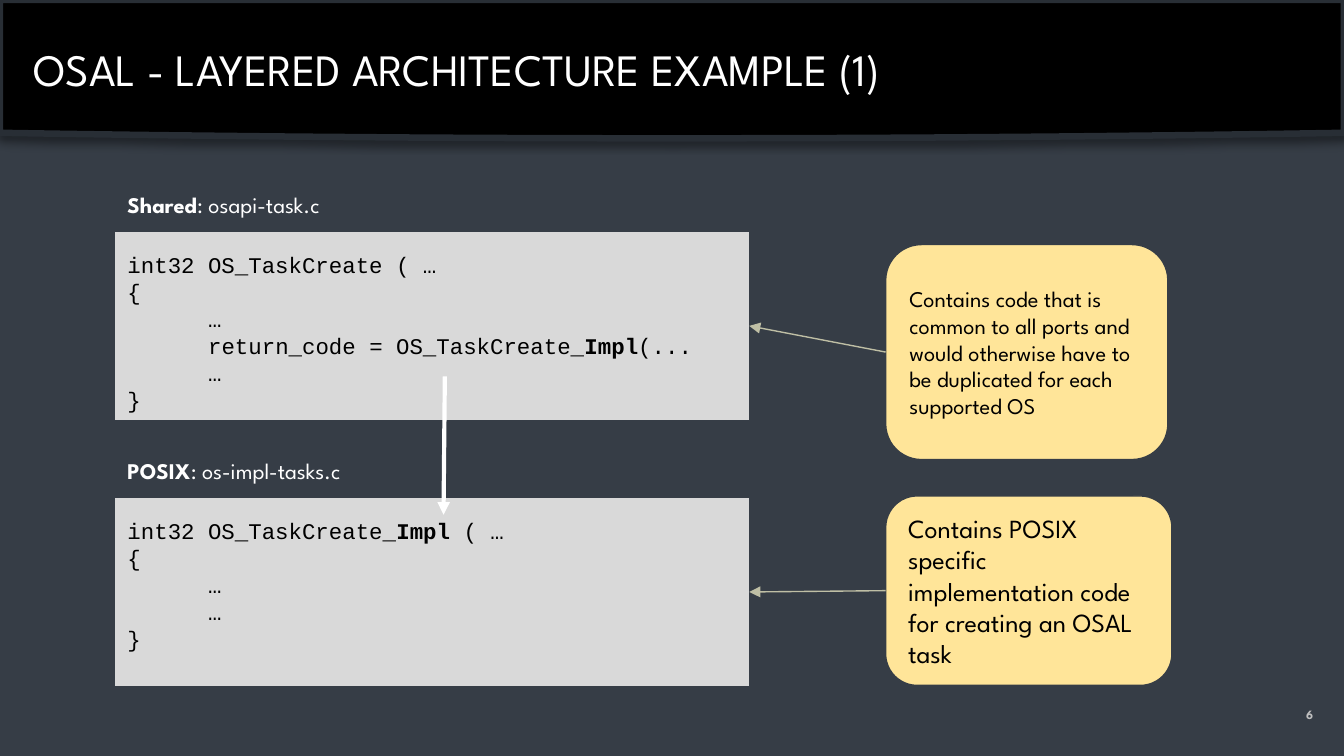
from dataclasses import dataclass

from lxml.etree import SubElement
from pptx import Presentation
from pptx.dml.color import RGBColor
from pptx.enum.shapes import MSO_CONNECTOR, MSO_SHAPE
from pptx.enum.text import MSO_ANCHOR, MSO_AUTO_SIZE, PP_ALIGN
from pptx.oxml.ns import qn
from pptx.util import Inches, Pt

COLUMNS, ROWS = 100, 56.25


@dataclass(frozen=True)
class Theme:
    background: str = "363D46"
    header: str = "000000"
    header_edge: str = "282E35"
    light: str = "FFFFFF"
    dark: str = "000000"
    muted: str = "BFBFBF"
    panel: str = "D9D9D9"
    note: str = "FFE599"
    link: str = "BFBFA5"
    sans: str = "League Spartan"
    mono: str = "Courier New"
    title_size: float = 24
    large_size: float = 14
    body_size: float = 12
    number_size: float = 6.8


@dataclass(frozen=True)
class Box:
    left: float
    top: float
    width: float
    height: float

    def place(self):
        return [grid(value) for value in (self.left, self.top, self.width, self.height)]


THEME = Theme()


def grid(units):
    return Inches(units / 10)


def color(value):
    return RGBColor.from_string(value)


def write_text(shape, paragraphs, size=THEME.body_size, font=THEME.sans, fill=THEME.light,
               align=PP_ALIGN.LEFT, anchor=MSO_ANCHOR.TOP, spacing=None):
    frame = shape.text_frame
    frame.auto_size = MSO_AUTO_SIZE.NONE
    frame.word_wrap = True
    frame.vertical_anchor = anchor
    frame.margin_left = frame.margin_right = frame.margin_top = frame.margin_bottom = grid(1)
    for index, (indent, runs) in enumerate(paragraphs):
        paragraph = frame.paragraphs[0] if index == 0 else frame.add_paragraph()
        paragraph.alignment = align
        if spacing:
            paragraph.line_spacing = Pt(spacing)
        if indent:
            properties = paragraph._p.get_or_add_pPr()
            properties.set("marL", str(grid(indent)))
            properties.set("indent", "0")
        for text, bold in runs:
            run = paragraph.add_run()
            run.text = text
            run.font.name = font
            run.font.size = Pt(size)
            run.font.bold = bold
            run.font.color.rgb = color(fill)


def add_text(slide, box, paragraphs, **text_format):
    shape = slide.shapes.add_textbox(*box.place())
    write_text(shape, paragraphs, **text_format)


def paint(shape, fill, edge, width):
    shape.shadow.inherit = False
    shape.fill.solid()
    shape.fill.fore_color.rgb = color(fill)
    shape.line.color.rgb = color(edge)
    shape.line.width = Pt(width)


def add_block(slide, kind, box, fill):
    shape = slide.shapes.add_shape(kind, *box.place())
    paint(shape, fill, THEME.background, 0.75)
    return shape


def add_arrow(slide, start, end, fill, width):
    points = [grid(value) for value in (*start, *end)]
    arrow = slide.shapes.add_connector(MSO_CONNECTOR.STRAIGHT, *points)
    arrow.line.color.rgb = color(fill)
    arrow.line.width = Pt(width)
    SubElement(arrow.line._get_or_add_ln(), qn("a:tailEnd"), type="triangle")
    SubElement(arrow._element.spPr, qn("a:effectLst"))
    return arrow


def add_header(slide, box, text):
    edge = box.height * 0.96
    sag = box.height - edge
    steps = 40
    curve = []
    for step in range(steps + 1):
        share = 1 - step / steps
        curve.append((grid(box.width * share), grid(edge + sag * (1 - (2 * share - 1) ** 2))))
    builder = slide.shapes.build_freeform(0, 0, scale=1.0)
    builder.add_line_segments([(grid(box.width), 0), *curve], close=True)
    band = builder.convert_to_shape()
    paint(band, THEME.header, THEME.header_edge, 3.5)
    effects = band._element.spPr.find(qn("a:effectLst"))
    shadow = SubElement(effects, qn("a:outerShdw"), blurRad=str(Pt(4)), dist=str(Pt(3)),
                        dir="5400000", algn="t", rotWithShape="0")
    shade = SubElement(shadow, qn("a:srgbClr"), val=THEME.header)
    SubElement(shade, qn("a:alpha"), val="40000")

    title = slide.shapes.title
    title.element.addprevious(band.element)
    title.left, title.top, title.width, title.height = Box(1.5, 2.1, 96.3, 6.3).place()
    write_text(title, [(0, [(text, False)])], size=THEME.title_size)


def add_code_panel(slide, box, layer, file_name, code):
    label_height = 4
    panel_box = Box(box.left, box.top + label_height, box.width, box.height - label_height)
    panel = add_block(slide, MSO_SHAPE.RECTANGLE, panel_box, THEME.panel)
    add_text(slide, Box(box.left, box.top, 19.5, label_height),
             [(0, [(layer, True), (f": {file_name}", False)])])
    add_text(slide, Box(box.left, panel_box.top + 0.5, 44.8, 2 + 2 * len(code)), code,
             font=THEME.mono, fill=THEME.dark, spacing=14.4)
    return panel


def add_note(slide, box, text, size, target):
    note = add_block(slide, MSO_SHAPE.ROUNDED_RECTANGLE, box, THEME.note)
    write_text(note, [(0, [(text, False)])], size=size, fill=THEME.dark,
               anchor=MSO_ANCHOR.MIDDLE)
    link = add_arrow(slide, (0, 0), (1, 1), THEME.link, 0.75)
    link.begin_connect(note, 1)
    link.end_connect(target, 3)


def main():
    presentation = Presentation()
    presentation.slide_width, presentation.slide_height = grid(COLUMNS), grid(ROWS)
    slide = presentation.slides.add_slide(presentation.slide_layouts[5])
    slide.background.fill.solid()
    slide.background.fill.fore_color.rgb = color(THEME.background)

    add_header(slide, Box(0, 0, COLUMNS, 10.3), "OSAL - LAYERED ARCHITECTURE EXAMPLE (1)")
    add_text(slide, Box(92.7, 51, 6, 4.3), [(0, [("6", True)])], size=THEME.number_size,
             fill=THEME.muted, align=PP_ALIGN.RIGHT, anchor=MSO_ANCHOR.MIDDLE)

    opening, ellipsis, closing = [(level, [(text, False)])
                                  for level, text in ((0, "{"), (6, "…"), (0, "}"))]
    posix_code = [(0, [("int32 OS_TaskCreate_", False), ("Impl", True), (" ( …", False)]),
                  opening, ellipsis, ellipsis, closing]
    call = (6, [("return_code = OS_TaskCreate_", False), ("Impl", True), ("(...", False)])
    shared_code = [(0, [("int32 OS_TaskCreate ( …", False)]),
                   opening, ellipsis, call, ellipsis, closing]

    posix = add_code_panel(slide, Box(8.5, 33, 47.25, 18.1), "POSIX", "os-impl-tasks.c", posix_code)
    add_note(slide, Box(65.9, 36.9, 21.3, 14.1),
             "Contains POSIX specific implementation code for creating an OSAL task",
             THEME.large_size, posix)
    shared = add_code_panel(slide, Box(8.5, 13.2, 47.25, 18.1), "Shared", "osapi-task.c", shared_code)
    add_note(slide, Box(65.9, 18.2, 21, 16),
             "Contains code that is common to all ports and would otherwise have to be "
             "duplicated for each supported OS", THEME.body_size, shared)
    add_arrow(slide, (33.1, 28), (33, 38.3), THEME.light, 2.25)

    presentation.save("out.pptx")


if __name__ == "__main__":
    main()
